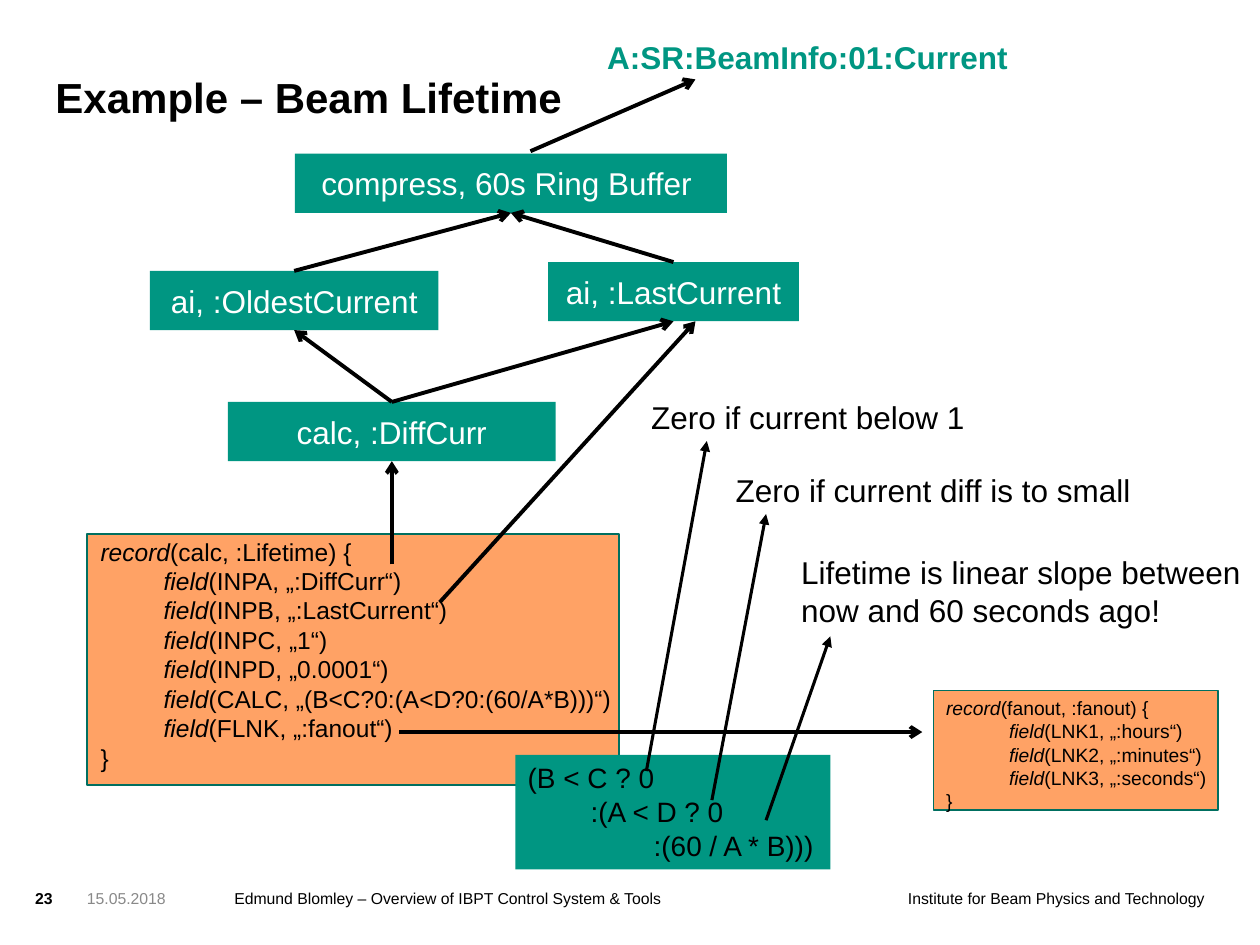
import pptx
import pptx.util
import pptx.dml.color
import pptx.enum.shapes
import pptx.enum.text
import pptx.oxml
import pptx.oxml.ns
import lxml.etree

Inches = pptx.util.Inches
ALIGN = pptx.enum.text.PP_ALIGN
ANCHOR = pptx.enum.text.MSO_ANCHOR
TOP, BOTTOM = 0, 2
GREEN, ORANGE, EDGE, BLACK, WHITE = "009682", "FF7F2A", "006F60", "000000", "FFFFFF"


def color(target, value):
    """Give a font, fill or line a solid hex colour."""
    if hasattr(target, "solid"):
        target.solid()
        target = target.fore_color
    else:
        target = target.color
    target.rgb = pptx.dml.color.RGBColor.from_string(value)


def style(font, value=BLACK, **formats):
    """Set font attributes from a dict of format values."""
    for name, setting in {"name": "Arial", **formats}.items():
        setattr(font, name, setting)
    color(font, value)


def write(tf, lines, size, value=BLACK, align=ALIGN.LEFT, anchor=ANCHOR.TOP,
          wrap=True, margin=None, bold=False):
    """Fill a text frame; each line is a list of (text, italic) pairs."""
    frame = {"word_wrap": wrap, "vertical_anchor": anchor,
             "auto_size": pptx.enum.text.MSO_AUTO_SIZE.NONE}
    if margin is not None:
        sides = ("left", "top", "right", "bottom")
        frame.update({f"margin_{side}": Inches(margin) for side in sides})
    for name, setting in frame.items():
        setattr(tf, name, setting)
    for i, line in enumerate(lines):
        p = tf.paragraphs[0] if i == 0 else tf.add_paragraph()
        p.alignment = align
        for text, italic in line:
            r = p.add_run()
            r.text = text
            style(r.font, value, size=pptx.util.Pt(size), bold=bold, italic=italic)


def plain(*lines):
    """Turn strings into upright lines for write."""
    return [[(line, False)] for line in lines]


def add_text(s, box, lines, size, **formats):
    """Add a text box."""
    sp = s.shapes.add_textbox(*map(Inches, box))
    write(sp.text_frame, lines, size, **formats)


def add_box(s, box, fill, alpha=None, edge=None):
    """Add a flat rectangle, optionally translucent and outlined."""
    sp = s.shapes.add_shape(pptx.enum.shapes.MSO_SHAPE.RECTANGLE, *map(Inches, box))
    sp.shadow.inherit = False
    color(sp.fill, fill)
    if alpha:
        clr = sp.fill._xPr.find(".//" + pptx.oxml.ns.qn("a:srgbClr"))
        lxml.etree.SubElement(clr, pptx.oxml.ns.qn("a:alpha"), val=str(alpha * 1000))
    if edge:
        color(sp.line.fill, edge)
        sp.line.width = pptx.util.Pt(1)
    else:
        sp.line.fill.background()
    return sp


def arrow(s, start, end, width=2.25, head="arrow", tail_box=None, head_box=None):
    """Draw an arrow, joined to the top of tail_box and the bottom of head_box if given."""
    cn = s.shapes.add_connector(pptx.enum.shapes.MSO_CONNECTOR.STRAIGHT,
                                *map(Inches, (*start, *end)))
    if tail_box is not None:
        cn.begin_connect(tail_box, TOP)
    if head_box is not None:
        cn.end_connect(head_box, BOTTOM)
    color(cn.line.fill, BLACK)
    cn.line.width = pptx.util.Pt(width)
    ln = cn.line._get_or_add_ln()
    lxml.etree.SubElement(ln, pptx.oxml.ns.qn("a:tailEnd"), type=head)
    lxml.etree.SubElement(cn._element.spPr, pptx.oxml.ns.qn("a:effectLst"))


def title(s, box):
    """Place the slide title."""
    sp = s.shapes.title
    sp.left, sp.top, sp.width, sp.height = map(Inches, box)
    write(sp.text_frame, plain("Example – Beam Lifetime"), 24, anchor=ANCHOR.BOTTOM,
          margin=0, bold=True)
    sp.text_frame.paragraphs[0].line_spacing = 0.9


def footer(s, box):
    """Place page number, date, talk and institute along the bottom."""
    x, y, w, h = box
    for dx, width, text, value, align, bold in (
            (0, 0.36, "23", BLACK, ALIGN.LEFT, True),
            (0.41, 1.12, "15.05.2018", "898989", ALIGN.LEFT, False),
            (1.58, 4.6, "Edmund Blomley – Overview of IBPT Control System & Tools",
             BLACK, ALIGN.LEFT, False),
            (w - 3, 3, "Institute for Beam Physics and Technology",
             BLACK, ALIGN.RIGHT, False)):
        add_text(s, (x + dx, y, width, h), plain(text), 9, value=value,
                 align=align, margin=0, bold=bold)


def record(s, box, name, fields, size, text_offset, text_size):
    """Draw a database record listing on an orange panel."""
    add_box(s, box, ORANGE, 72, EDGE)
    lines = [[("record", True), (f"({name}) {{", False)]]
    lines += [[("\tfield", True), (f"({key}, „{value}“)", False)] for key, value in fields]
    lines += plain("}")
    x, y = (a + b for a, b in zip(box, text_offset))
    add_text(s, (x, y, *text_size), lines, size)


def graph(s, box):
    """Draw the tree of processing records and its links."""
    x, y, w, h = box
    node_h = 0.47
    nodes = {}
    for key, dx, dy, width, text in (
            ("last", 3.16, 0.86, 1.99, "ai, :LastCurrent"),
            ("oldest", 0, 0.93, 2.29, "ai, :OldestCurrent"),
            ("buffer", 1.15, 0, 3.43, "compress, 60s Ring Buffer "),
            ("diff", 0.62, 1.97, 2.6, "calc, :DiffCurr")):
        nodes[key] = add_box(s, (x + dx, y + dy, width, node_h), GREEN)
        write(nodes[key].text_frame, plain(text), 18, value=WHITE,
              align=ALIGN.CENTER, anchor=ANCHOR.MIDDLE)
    for tail, head in (("oldest", "buffer"), ("last", "buffer"),
                       ("diff", "oldest"), ("diff", "last")):
        arrow(s, (x, y), (x, y), tail_box=nodes[tail], head_box=nodes[head])
    add_text(s, (x + 3.53, y - 0.97, 3.41, 0.4), plain("A:SR:BeamInfo:01:Current"),
             18, value=GREEN, wrap=False, bold=True)
    arrow(s, (x + 3.02, y - 0.02), (x + 4.33, y - 0.59))
    arrow(s, (x + 1.92, y + 3.26), (x, y), head_box=nodes["diff"])
    arrow(s, (x + 2.3, y + 3.56), (x + 4.33, y + 1.33))


def formula(s, box):
    """Show the formula split over three lines."""
    sp = add_box(s, box, GREEN)
    write(sp.text_frame, plain("(B < C ? 0", "\t:(A < D ? 0", "\t\t:(60 / A * B)))"),
          16, wrap=False)


def notes(s, box):
    """Explain each formula branch with a label and an arrow."""
    x, y, w, h = box
    for dx, dy, width, height, lines, start, end in (
            (0, 0, 2.71, 0.4, ["Zero if current below 1"], (0.06, 3.01), (0.54, 0.39)),
            (0.67, 0.58, 3.37, 0.4, ["Zero if current diff is to small"],
             (0.58, 3.24), (1.01, 0.97)),
            (1.19, 1.23, 3.79, 0.71,
             ["Lifetime is linear slope between", "now and 60 seconds ago!"],
             (1.01, 3.4), (1.52, 1.94))):
        add_text(s, (x + dx, y + dy, width, height), plain(*lines), 18, wrap=False)
        arrow(s, (x + start[0], y + start[1]), (x + end[0], y + end[1]), 1.75, "triangle")


def main():
    """Build and save the slide."""
    prs = pptx.Presentation()
    prs.slide_width, prs.slide_height = Inches(10), Inches(7.5)
    s = prs.slides.add_slide(prs.slide_layouts[5])
    footer(s, (0.28, 7.05, 9.28, 0.4))
    title(s, (0.44, 0.43, 7.51, 0.54))
    record(s, (0.69, 4.24, 4.22, 1.99), "calc, :Lifetime",
           [("INPA", ":DiffCurr"), ("INPB", ":LastCurrent"), ("INPC", "1"),
            ("INPD", "0.0001"), ("CALC", "(B<C?0:(A<D?0:(60/A*B)))"),
            ("FLNK", ":fanout")], 14, (0.01, -0.03), (4.42, 1.99))
    record(s, (7.41, 5.48, 2.26, 0.95), "fanout, :fanout",
           [("LNK1", ":hours"), ("LNK2", ":minutes"), ("LNK3", ":seconds")],
           11, (0, 0), (2.42, 1.03))
    formula(s, (4.09, 5.99, 2.5, 0.91))
    graph(s, (1.19, 1.22, 5.15, 2.44))
    arrow(s, (3.17, 5.81), (7.32, 5.81))
    notes(s, (5.07, 3.11, 4.98, 3.4))
    prs.save("out.pptx")


if __name__ == "__main__":
    main()
